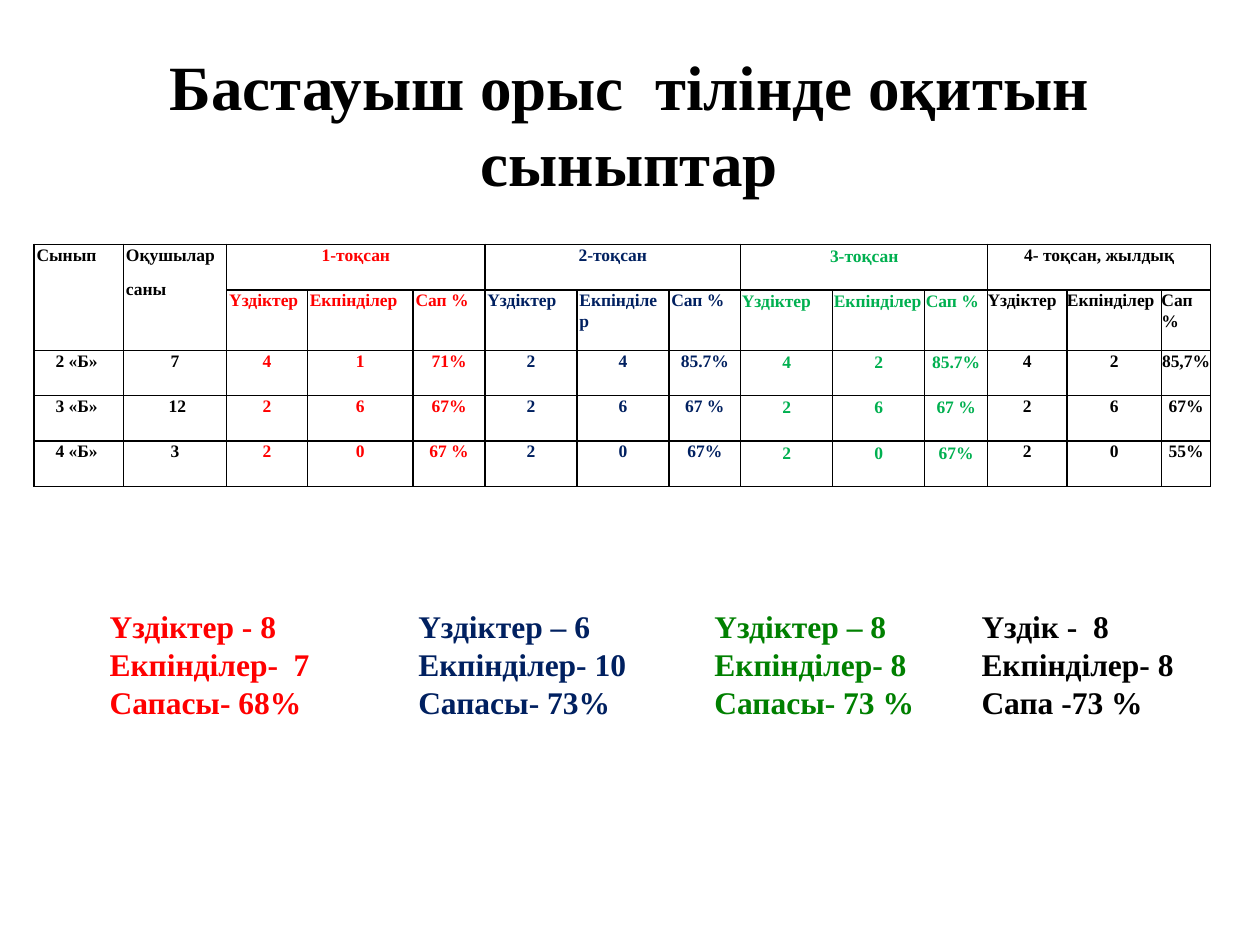
from dataclasses import dataclass

from lxml.etree import SubElement
from pptx import Presentation
from pptx.dml.color import RGBColor as RGB
from pptx.enum.text import MSO_ANCHOR as Anchor, PP_ALIGN as Align
from pptx.oxml.ns import qn
from pptx.util import Inches, Pt


@dataclass(frozen=True)
class Theme:
    font: str = "Times New Roman"
    black: str = "000000"
    red: str = "FF0000"
    navy: str = "002060"
    green: str = "00B050"
    dark_green: str = "008000"
    title: int = 36
    summary: int = 18
    table: int = 10
    border: int = 1


T = Theme()
TITLE = "Бастауыш орыс  тілінде оқитын сыныптар"
COLUMNS = [0.71, 0.82, 0.64, 0.84, 0.57, 0.73, 0.73, 0.57,
           0.73, 0.73, 0.5, 0.63, 0.75, 0.39]
ROWS = [0.36, 0.48, 0.36, 0.36, 0.36]
QUARTERS = ["1-тоқсан", "2-тоқсан", "3-тоқсан", "4- тоқсан, жылдық"]
MEASURES = ["Үздіктер", "Екпінділер", "Сап %"]
RESULTS = [
    ["2 «Б» ", "7", "4", "1", "71%", "2", "4", "85.7%", "4", "2", "85.7%", "4", "2", "85,7%"],
    ["3 «Б» ", " 12", "2", "6", "67%", "2", "6", "67 %", "2", "6", "67 %", "2", "6", "67%"],
    ["4 «Б» ", "3", "2", "0", "67 %", "2", "0", "67%", "2", "0", "67%", "2", "0", "55%"],
]
QUARTER_COLORS = [T.red, T.navy, T.green, T.black]
QUARTER_INSETS = [(0.02, 0), (0.02, 0), (0.01, 0.01), (0, 0)]
SUMMARY = [
    ["Үздіктер - 8", "Үздіктер – 6", "Үздіктер – 8", "Үздік -  8"],
    ["Екпінділер-  7", "Екпінділер- 10", "Екпінділер- 8", "Екпінділер- 8"],
    ["Сапасы- 68%", "Сапасы- 73%", "Сапасы- 73 %", "Сапа -73 %"],
]
SUMMARY_COLORS = [T.red, T.navy, T.dark_green, T.black]
SUMMARY_TABS = [2.45, 4.8, 6.92]


def set_font(font, size, color=T.black):
    font.name = T.font
    font.size = Pt(size)
    font.bold = True
    font.color.rgb = RGB.from_string(color)


def add_text_box(s, left, top, width, height):
    tf = s.shapes.add_textbox(*map(Inches, (left, top, width, height))).text_frame
    tf.word_wrap = True
    return tf


def add_title(s):
    tf = add_text_box(s, 1.13, 0.33, 7.73, 1.31)
    p = tf.paragraphs[0]
    p.text = TITLE
    p.alignment = Align.CENTER
    set_font(p.font, T.title)


def set_borders(cell):
    tc_pr = cell._tc.get_or_add_tcPr()
    for side in ("lnL", "lnR", "lnT", "lnB"):
        ln = SubElement(tc_pr, qn(f"a:{side}"), w=str(Pt(T.border)))
        fill = SubElement(ln, qn("a:solidFill"))
        SubElement(fill, qn("a:srgbClr"), val=T.black)


def fill_cell(cell, text, align, color, inset):
    side, top = map(Inches, inset)
    cell.margin_left = cell.margin_right = side
    cell.margin_top, cell.margin_bottom = top, 0
    cell.vertical_anchor = Anchor.TOP
    set_borders(cell)
    cell.fill.background()
    cell.text = text
    for p in cell.text_frame.paragraphs:
        p.alignment = align
        p.line_spacing = 1.07
        p.space_after = Pt(8)
        set_font(p.font, T.table, color)


def add_results_table(s):
    quarter_row = ["Сынып", "Оқушылар\nсаны"]
    for quarter in QUARTERS:
        quarter_row += [quarter, "", ""]
    measure_row = ["", ""] + MEASURES * len(QUARTERS)
    frame = s.shapes.add_table(len(ROWS), len(COLUMNS), Inches(0.27), Inches(1.94),
                               Inches(sum(COLUMNS)), Inches(sum(ROWS)))
    table = frame.table
    table.first_row = table.horz_banding = False
    for column, width in zip(table.columns, COLUMNS):
        column.width = Inches(width)
    for row, height in zip(table.rows, ROWS):
        row.height = Inches(height)
    for i, texts in enumerate([quarter_row, measure_row] + RESULTS):
        for j, text in enumerate(texts):
            quarter = (j - 2) // 3
            color = QUARTER_COLORS[quarter] if j > 1 else T.black
            inset = QUARTER_INSETS[max(quarter, 0)]
            centered = i > 1 or (i == 0 and j > 1)
            align = Align.CENTER if centered else Align.LEFT
            fill_cell(table.cell(i, j), text, align, color, inset)
    for j in range(2):
        table.cell(0, j).merge(table.cell(1, j))
    for j in range(2, len(COLUMNS), 3):
        table.cell(0, j).merge(table.cell(0, j + 2))


def add_tab_stops(p):
    tabs = SubElement(p._p.get_or_add_pPr(), qn("a:tabLst"))
    for pos in SUMMARY_TABS:
        SubElement(tabs, qn("a:tab"), pos=str(Inches(pos)), algn="l")


def add_summary(s):
    tf = add_text_box(s, 0.27, 4.77, 9.46, 1.31)
    tf.margin_left = Inches(0.6)
    for i, totals in enumerate(SUMMARY):
        p = tf.add_paragraph() if i else tf.paragraphs[0]
        add_tab_stops(p)
        for j, (total, color) in enumerate(zip(totals, SUMMARY_COLORS)):
            r = p.add_run()
            r.text = f"\t{total}" if j else total
            set_font(r.font, T.summary, color)


def main():
    prs = Presentation()
    prs.slide_width, prs.slide_height = Inches(10), Inches(7.5)
    s = prs.slides.add_slide(prs.slide_layouts[6])
    add_title(s)
    add_summary(s)
    add_results_table(s)
    prs.save("out.pptx")


if __name__ == "__main__":
    main()
